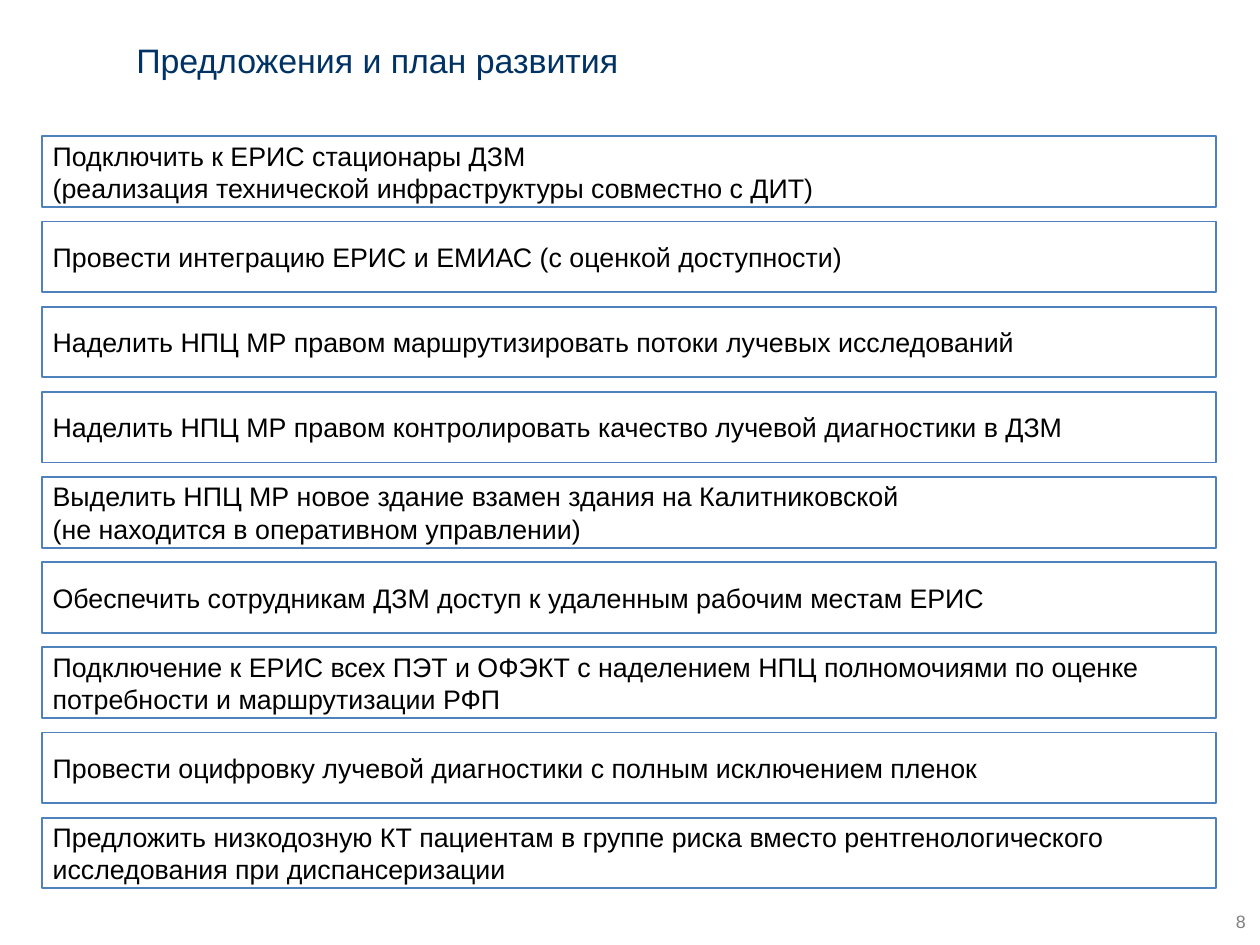
from lxml.etree import SubElement
from pptx import Presentation
from pptx.dml.color import RGBColor
from pptx.enum.shapes import MSO_SHAPE
from pptx.enum.text import MSO_ANCHOR, PP_ALIGN
from pptx.oxml.ns import qn
from pptx.util import Inches, Pt

PROPOSALS = [
    "Подключить к ЕРИС стационары ДЗМ\n(реализация технической инфраструктуры совместно с ДИТ)",
    "Провести интеграцию ЕРИС и ЕМИАС (с оценкой доступности)",
    "Наделить НПЦ МР правом маршрутизировать потоки лучевых исследований",
    "Наделить НПЦ МР правом контролировать качество лучевой диагностики в ДЗМ",
    "Выделить НПЦ МР новое здание взамен здания на Калитниковской\n(не находится в оперативном управлении)",
    "Обеспечить сотрудникам ДЗМ доступ к удаленным рабочим местам ЕРИС",
    "Подключение к ЕРИС всех ПЭТ и ОФЭКТ с наделением НПЦ полномочиями по оценке потребности и маршрутизации РФП",
    "Провести оцифровку лучевой диагностики с полным исключением пленок",
    "Предложить низкодозную КТ пациентам в группе риска вместо рентгенологического исследования при диспансеризации",
]


def color(value):
    return RGBColor.from_string(value)


def write_text(shape, text, size, text_color, align=PP_ALIGN.LEFT,
               anchor=MSO_ANCHOR.MIDDLE, margin=0, wrap=True):
    """Fill the shape with one paragraph; a newline becomes a line break."""
    frame = shape.text_frame
    inset = Inches(margin)
    frame_format = {
        "word_wrap": wrap, "vertical_anchor": anchor,
        "margin_left": inset, "margin_top": inset,
        "margin_right": inset, "margin_bottom": inset,
    }
    for name, value in frame_format.items():
        setattr(frame, name, value)
    para = frame.paragraphs[0]
    para.text = text
    para.alignment = align
    for span in para.runs:
        for name, value in {"name": "Arial", "size": Pt(size)}.items():
            setattr(span.font, name, value)
        span.font.color.rgb = color(text_color)
    for line_break in para._p.findall(qn("a:br")):
        SubElement(line_break, qn("a:rPr"), sz=str(size * 100))


def place_title(page, left, top, width, height):
    title = page.shapes.title
    box = {"left": left, "top": top, "width": width, "height": height}
    for name, value in box.items():
        setattr(title, name, Inches(value))
    write_text(title, "Предложения и план развития", 19, "003264", anchor=MSO_ANCHOR.TOP)


def place_proposals(page, left, top, width, height, bar_height=0.55):
    """Spread equal bars over the box from its top edge to its bottom edge."""
    pitch = (height - bar_height) / (len(PROPOSALS) - 1)
    for index, proposal in enumerate(PROPOSALS):
        bar = page.shapes.add_shape(
            MSO_SHAPE.RECTANGLE, Inches(left), Inches(top + index * pitch),
            Inches(width), Inches(bar_height))
        bar.shadow.inherit = False
        bar.fill.solid()
        bar.fill.fore_color.rgb = color("FFFFFF")
        bar.line.color.rgb = color("4F81BD")
        bar.line.width = Pt(1)
        write_text(bar, proposal, 15, "000000", margin=0.08)


def place_page_number(page, left, top, width, height):
    number = page.shapes.add_textbox(
        Inches(left), Inches(top), Inches(width), Inches(height))
    write_text(number, "8", 10, "808080", align=PP_ALIGN.RIGHT, wrap=False)


def main():
    deck = Presentation()
    deck.slide_width, deck.slide_height = Inches(9.8), Inches(7.35)
    page = deck.slides.add_slide(deck.slide_layouts.get_by_name("Title Only"))
    place_title(page, 1.06, 0.31, 7.92, 0.32)
    place_proposals(page, 0.33, 1.06, 9.13, 5.85)
    place_page_number(page, 9.52, 7.08, 0.17, 0.17)
    deck.save("out.pptx")


if __name__ == "__main__":
    main()
